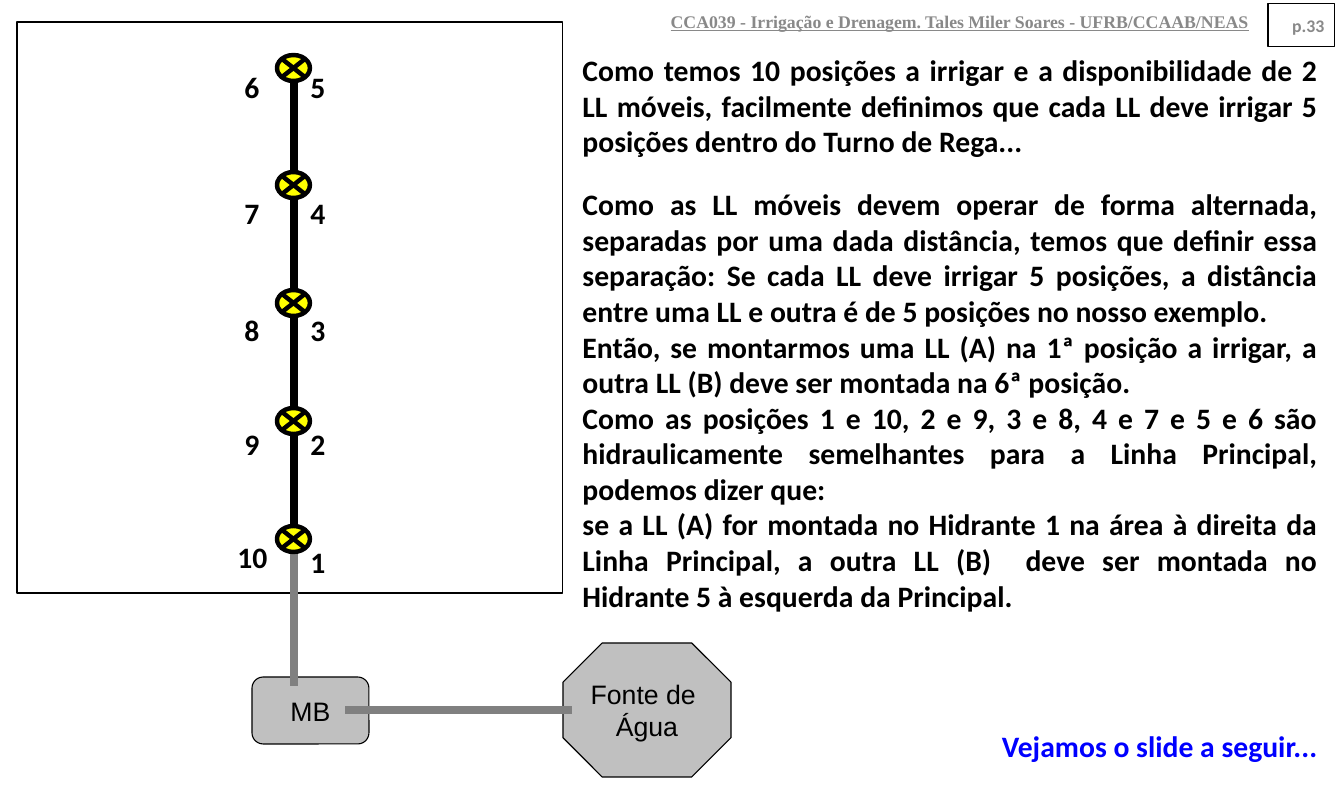
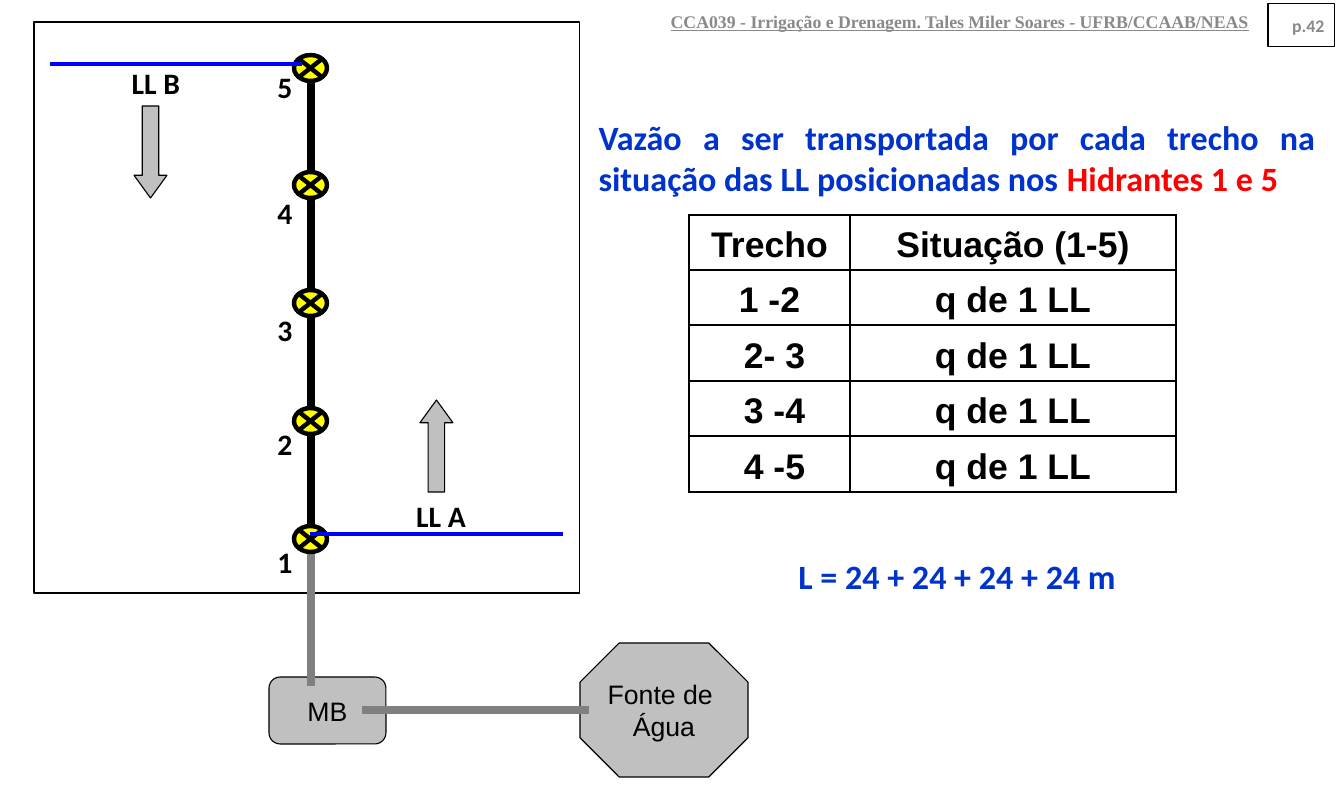
from lxml.etree import SubElement
from pptx import Presentation
from pptx.dml.color import RGBColor
from pptx.enum.shapes import MSO_CONNECTOR as LINK, MSO_SHAPE as KIND
from pptx.enum.text import MSO_ANCHOR as ANCHOR, MSO_AUTO_SIZE as AUTO, PP_ALIGN as ALIGN
from pptx.oxml.ns import qn
from pptx.util import Pt

SCALE = 8572.5  # EMU in one px
WIDE, HIGH = 1344, 800
HUES = {
    "black": "000000", "white": "FFFFFF", "silver": "C0C0C0", "gray": "808080",
    "dim": "898989", "yellow": "FFFF00", "blue": "0000FF", "royal": "0033CC",
    "red": "FF0000",
}
BODY = {"name": "Calibri", "size": Pt(20), "bold": True}
LEAD = {**BODY, "size": Pt(23)}
MARK = {**BODY, "size": Pt(12)}
HEAD = {**MARK, "name": "Times New Roman", "underline": True}
PART = {"name": "Arial", "size": Pt(18)}
GRID = {"name": "Arial", "size": Pt(24), "bold": True}
COURSE = "CCA039 - Irrigação e Drenagem. Tales Miler Soares - UFRB/CCAAB/NEAS"
TOPS = [539, 421, 307, 190, 64]  # number tops, hydrant 1 to 5


def emu(*vals):
    return [round(v * SCALE) for v in vals]


def rgb(hue):
    return RGBColor.from_string(HUES[hue])


class Deck:
    """Holds the style and the slide being drawn."""

    def __init__(self):
        self.prs = Presentation()
        self.prs.slide_width, self.prs.slide_height = emu(WIDE, HIGH)
        self.slide = None

    def page(self, num):
        """Start a slide with its running head and page box."""
        self.slide = self.prs.slides.add_slide(self.prs.slide_layouts[6])
        self.text((579, 0, 681, 43), [COURSE], ALIGN.RIGHT, "dim", HEAD,
                  anchor=ANCHOR.MIDDLE, fit=AUTO.NONE)
        box = self.shape(KIND.RECTANGLE, (1268, 4, 67, 43), None)
        box.text_frame.word_wrap = True
        self.words(box.text_frame, [f"p.{num}"], ALIGN.RIGHT, "dim", MARK)

    def words(self, frame, paras, align, hue, font):
        """Fill a frame; a paragraph is a string or a list of (text, hue)."""
        for i, para in enumerate(paras):
            p = frame.add_paragraph() if i else frame.paragraphs[0]
            p.alignment = align
            for part, tint in [(para, hue)] if isinstance(para, str) else para:
                run = p.add_run()
                run.text = part
                run.font.color.rgb = rgb(tint)
                for key, val in font.items():
                    setattr(run.font, key, val)

    def text(self, at, paras, align, hue="black", font=BODY,
             anchor=ANCHOR.TOP, fit=AUTO.SHAPE_TO_FIT_TEXT):
        frame = self.slide.shapes.add_textbox(*emu(*at)).text_frame
        look = {"word_wrap": True, "auto_size": fit, "vertical_anchor": anchor}
        for key, val in look.items():
            setattr(frame, key, val)
        self.words(frame, paras, align, hue, font)

    def shape(self, kind, at, fill, width=0.75, adj=(), turn=0, label=()):
        item = self.slide.shapes.add_shape(kind, *emu(*at))
        item.shadow.inherit = False
        item.rotation = turn
        for i, val in enumerate(adj):
            item.adjustments[i] = val
        if fill:
            item.fill.solid()
            item.fill.fore_color.rgb = rgb(fill)
        else:
            item.fill.background()
        item.line.color.rgb = rgb("black")
        item.line.width = Pt(width)
        item.text_frame.vertical_anchor = ANCHOR.MIDDLE
        if label:
            item.text_frame.word_wrap = False
            self.words(item.text_frame, label, ALIGN.CENTER, "black", PART)
        return item

    def line(self, ends, hue, width):
        item = self.slide.shapes.add_connector(LINK.STRAIGHT, *emu(*ends))
        item.line.color.rgb = rgb(hue)
        item.line.width = Pt(width)
        SubElement(item._element.spPr, qn("a:effectLst"))

    def table(self, at, cols, rows):
        left, top, high = at
        count = len(rows)
        table = self.slide.shapes.add_table(
            count, len(cols), *emu(left, top, sum(cols), high)).table
        table.first_row = table.horz_banding = False
        for col, wide in zip(table.columns, cols):
            col.width, = emu(wide)
        for i, row in enumerate(rows):
            table.rows[i].height, = emu(high * (i + 1) // count - high * i // count)
            for j, label in enumerate(row):
                cell = table.cell(i, j)
                self.edge(cell)
                cell.fill.solid()
                cell.fill.fore_color.rgb = rgb("white")
                cell.vertical_anchor = ANCHOR.BOTTOM
                self.words(cell.text_frame, [label], ALIGN.CENTER, "black", GRID)

    def edge(self, cell):
        """Draw a thin black border on all four sides."""
        props = cell._tc.get_or_add_tcPr()
        for side in "LRTB":
            rule = SubElement(props, qn(f"a:ln{side}"), w=str(int(Pt(1))))
            fill = SubElement(rule, qn("a:solidFill"))
            SubElement(fill, qn("a:srgbClr"), val=HUES["black"])

    def plot(self, left):
        """Draw the field, its main line, hydrants, pump and water source."""
        main = left + 277
        self.shape(KIND.RECTANGLE, (left, 22, 546, 571), "white")
        self.shape(KIND.OCTAGON, (left + 546, 643, 168, 134), "silver",
                   adj=[0.293], label=["Fonte de ", "Água"])
        self.shape(KIND.ROUNDED_RECTANGLE, (left + 235, 677, 117, 67), "silver",
                   adj=[0.167], label=["MB"])
        self.line((left + 555, 710, left + 328, 710), "gray", 5)
        self.line((main, 543, main, 686), "gray", 5)
        self.line((main, 64, main, 543), "black", 5)
        for i in range(5):
            self.shape(KIND.FLOWCHART_SUMMING_JUNCTION,
                       (main - 17, 55 + 471 * i // 4, 33, 26), "yellow", 3)

    def count(self, left, nums, tops=TOPS):
        """Number the hydrants from the bottom up."""
        for num, top in zip(nums, tops):
            self.text((left, top, 43, 46), [str(num)], ALIGN.RIGHT)


def split(deck):
    """Show how the ten positions are shared by the two lines."""
    deck.page(33)
    deck.plot(17)
    deck.count(293, range(1, 6))
    deck.text((219, 534, 59, 46), ["10"], ALIGN.RIGHT)
    deck.count(227, range(9, 5, -1), TOPS[1:])
    deck.text((572, 47, 756, 117), [
        "Como temos 10 posições a irrigar e a disponibilidade de 2 LL móveis, "
        "facilmente definimos que cada LL deve irrigar 5 posições dentro do "
        "Turno de Rega...",
    ], ALIGN.JUSTIFY)
    deck.text((572, 181, 756, 437), [
        "Como as LL móveis devem operar de forma alternada, separadas por uma "
        "dada distância, temos que definir essa separação: Se cada LL deve "
        "irrigar 5 posições, a distância entre uma LL e outra é de 5 posições "
        "no nosso exemplo.",
        "Então, se montarmos uma LL (A) na 1ª posição a irrigar, a outra LL (B) "
        "deve ser montada na 6ª posição.",
        "Como as posições 1 e 10, 2 e 9, 3 e 8, 4 e 7 e 5 e 6 são "
        "hidraulicamente semelhantes para a Linha Principal, podemos dizer que:",
        "se a LL (A) for montada no Hidrante 1 na área à direita da Linha "
        "Principal, a outra LL (B)  deve ser montada no Hidrante 5 à esquerda "
        "da Principal.",
    ], ALIGN.JUSTIFY)
    deck.text((908, 723, 420, 46), ["Vejamos o slide a seguir..."],
              ALIGN.RIGHT, "blue")


def flow(deck):
    """Show the flow in each stretch with lines at hydrants 1 and 5."""
    deck.page(42)
    deck.plot(34)
    deck.count(260, range(1, 6))
    sides = [
        ("LL A", (378, 493), (420, 400), 0, (310, 534, 563, 534)),
        ("LL B", (93, 60), (134, 106), 180, (50, 64, 302, 64)),
    ]
    for name, spot, tip, turn, ends in sides:
        deck.line(ends, "blue", 3)
        deck.text((*spot, 126, 46), [name], ALIGN.CENTER)
        deck.shape(KIND.UP_ARROW, (*tip, 33, 92), "silver",
                   adj=[0.5, 0.689], turn=turn)
    deck.text((588, 111, 739, 93), [[
        ("Vazão a ser transportada por cada trecho na situação das LL "
         "posicionadas nos ", "royal"),
        ("Hidrantes 1 e 5", "red"),
    ]], ALIGN.JUSTIFY, font=LEAD)
    spans = [" 1 -2 ", " 2- 3", " 3 -4", " 4 -5"]
    deck.table((689, 215, 277), [161, 326],
               [("Trecho", "Situação (1-5)")] + [(s, "q de 1 LL") for s in spans])
    deck.text((756, 550, 403, 51), ["L = 24 + 24 + 24 + 24 m"],
              ALIGN.CENTER, "royal", LEAD)


def main():
    deck = Deck()
    split(deck)
    flow(deck)
    deck.prs.save("out.pptx")


if __name__ == "__main__":
    main()
